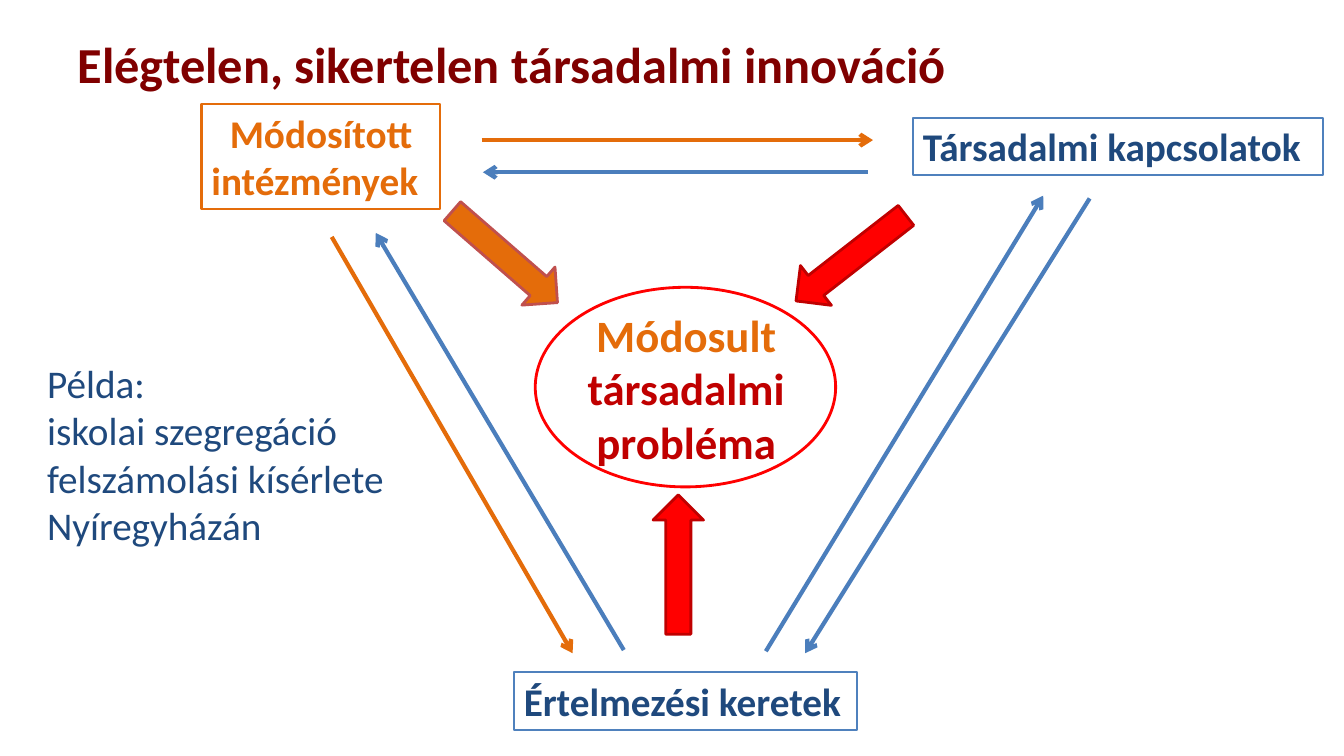
from typing import NamedTuple, Optional

from lxml.etree import SubElement
from pptx import Presentation
from pptx.dml.color import RGBColor
from pptx.enum.shapes import MSO_CONNECTOR, MSO_SHAPE
from pptx.enum.text import MSO_ANCHOR, MSO_AUTO_SIZE, PP_ALIGN
from pptx.oxml.ns import qn
from pptx.shapes.autoshape import Shape
from pptx.slide import Slide
from pptx.text.text import Font
from pptx.util import Cm, Pt

MAROON = RGBColor(0x80, 0x00, 0x00)
ORANGE = RGBColor(0xE4, 0x6C, 0x0A)
NAVY = RGBColor(0x1F, 0x49, 0x7D)
BOX_BLUE = RGBColor(0x4F, 0x81, 0xBD)
ARROW_BLUE = RGBColor(0x4B, 0x7E, 0xBC)
RED = RGBColor(0xFF, 0x00, 0x00)
DARK_RED = RGBColor(0xC0, 0x00, 0x00)
BRICK = RGBColor(0xC0, 0x50, 0x4D)

FONT_NAME = "Calibri"
BLOCK_ARROW_WIDTH, BLOCK_ARROW_HEIGHT = 3.51, 1.27


class Area(NamedTuple):
    """Left, top, width and height in centimetres."""
    left: float
    top: float
    width: float
    height: float

    def lengths(self) -> list[Cm]:
        return [Cm(value) for value in self]


class Factor(NamedTuple):
    lines: list[str]
    area: Area
    text_color: RGBColor
    border: RGBColor


class Influence(NamedTuple):
    """Block arrow pointing at the central problem."""
    left: float
    top: float
    rotation: float
    fill: RGBColor
    border: RGBColor


class Relation(NamedTuple):
    """Thin arrow between two factors."""
    start: tuple[float, float]
    end: tuple[float, float]
    color: RGBColor


FACTORS = [
    Factor(["Módosított", "intézmények"], Area(5.08, 2.62, 6.02, 2.64), ORANGE, ORANGE),
    Factor(["Társadalmi kapcsolatok"], Area(23.01, 2.97, 10.34, 1.45), NAVY, BOX_BLUE),
    Factor(["Értelmezési keretek"], Area(12.95, 16.94, 8.66, 1.45), NAVY, BOX_BLUE),
]

INFLUENCES = [
    Influence(10.97, 5.84, 41, ORANGE, BRICK),
    Influence(19.69, 5.87, 142.1, RED, DARK_RED),
    Influence(15.34, 13.59, 270, RED, DARK_RED),
]

RELATIONS = [
    Relation((8.36, 5.97), (14.43, 16.46), ORANGE),
    Relation((15.72, 16.38), (9.47, 5.87), ARROW_BLUE),
    Relation((27.46, 5), (20.29, 16.46), ARROW_BLUE),
    Relation((19.3, 16.41), (26.29, 4.93), ARROW_BLUE),
    Relation((12.14, 3.53), (22, 3.53), ORANGE),
    Relation((21.87, 4.34), (12.17, 4.34), ARROW_BLUE),
]


def style_font(font: Font, size: float, color: RGBColor, bold: bool = True) -> None:
    font.name = FONT_NAME
    font.size = Pt(size)
    font.bold = bold
    font.color.rgb = color


def add_outlined(slide: Slide, kind: MSO_SHAPE, area: Area, border: RGBColor,
                 weight: float, fill: Optional[RGBColor] = None) -> Shape:
    shape = slide.shapes.add_shape(kind, *area.lengths())
    shape.shadow.inherit = False
    if fill is None:
        shape.fill.background()
    else:
        shape.fill.solid()
        shape.fill.fore_color.rgb = fill
    shape.line.color.rgb = border
    shape.line.width = Pt(weight)
    return shape


def add_factor(slide: Slide, factor: Factor) -> None:
    box = add_outlined(slide, MSO_SHAPE.RECTANGLE, factor.area, factor.border, 1.5)
    frame = box.text_frame
    frame.word_wrap = True
    frame.vertical_anchor = MSO_ANCHOR.TOP
    frame.text = "\n".join(factor.lines)
    for paragraph in frame.paragraphs:
        paragraph.alignment = PP_ALIGN.LEFT
        style_font(paragraph.font, 28, factor.text_color)
    if len(factor.lines) > 1:
        frame.paragraphs[0].alignment = PP_ALIGN.CENTER


def add_influence(slide: Slide, influence: Influence) -> None:
    area = Area(influence.left, influence.top, BLOCK_ARROW_WIDTH, BLOCK_ARROW_HEIGHT)
    arrow = add_outlined(slide, MSO_SHAPE.RIGHT_ARROW, area,
                         influence.border, 2, influence.fill)
    arrow.rotation = influence.rotation


def add_relation(slide: Slide, relation: Relation) -> None:
    ends = [Cm(value) for value in relation.start + relation.end]
    arrow = slide.shapes.add_connector(MSO_CONNECTOR.STRAIGHT, *ends)
    arrow.line.color.rgb = relation.color
    arrow.line.width = Pt(3)
    SubElement(arrow.line._get_or_add_ln(), qn("a:tailEnd"), type="arrow")
    SubElement(arrow._element.spPr, qn("a:effectLst"))


def add_title(slide: Slide) -> None:
    title = slide.shapes.title
    title.left, title.top, title.width, title.height = Area(1.7, 0.71, 30.48, 1.78).lengths()
    frame = title.text_frame
    frame.text = "Elégtelen, sikertelen társadalmi innováció"
    frame.auto_size = MSO_AUTO_SIZE.NONE
    frame.vertical_anchor = MSO_ANCHOR.MIDDLE
    frame.paragraphs[0].alignment = PP_ALIGN.LEFT
    style_font(frame.paragraphs[0].font, 36, MAROON)


def add_problem(slide: Slide) -> None:
    problem = slide.shapes.add_textbox(*Area(13.79, 7.62, 7.01, 4.37).lengths())
    problem.text_frame.word_wrap = True
    paragraph = problem.text_frame.paragraphs[0]
    paragraph.alignment = PP_ALIGN.CENTER
    for words, color in [("Módosult ", ORANGE), ("társadalmi probléma", DARK_RED)]:
        run = paragraph.add_run()
        run.text = words
        style_font(run.font, 32, color)
    add_outlined(slide, MSO_SHAPE.OVAL, Area(13.49, 7.24, 7.57, 5.03), RED, 2)


def add_example(slide: Slide) -> None:
    example = slide.shapes.add_textbox(*Area(0.94, 8.94, 11.86, 5.05).lengths())
    example.text_frame.word_wrap = True
    paragraph = example.text_frame.paragraphs[0]
    paragraph.text = "Példa:\viskolai szegregáció felszámolási kísérlete\vNyíregyházán"
    style_font(paragraph.font, 28, NAVY, bold=False)


def main() -> None:
    presentation = Presentation()
    presentation.slide_width = Cm(33.87)
    presentation.slide_height = Cm(19.05)
    slide = presentation.slides.add_slide(presentation.slide_layouts[5])

    # Title and the three factors
    add_title(slide)
    for factor in FACTORS:
        add_factor(slide, factor)

    # Central problem and what acts on it
    add_problem(slide)
    for influence in INFLUENCES:
        add_influence(slide, influence)

    # Relations between the factors
    for relation in RELATIONS:
        add_relation(slide, relation)

    # Example at the left
    add_example(slide)
    presentation.save("out.pptx")


if __name__ == "__main__":
    main()
